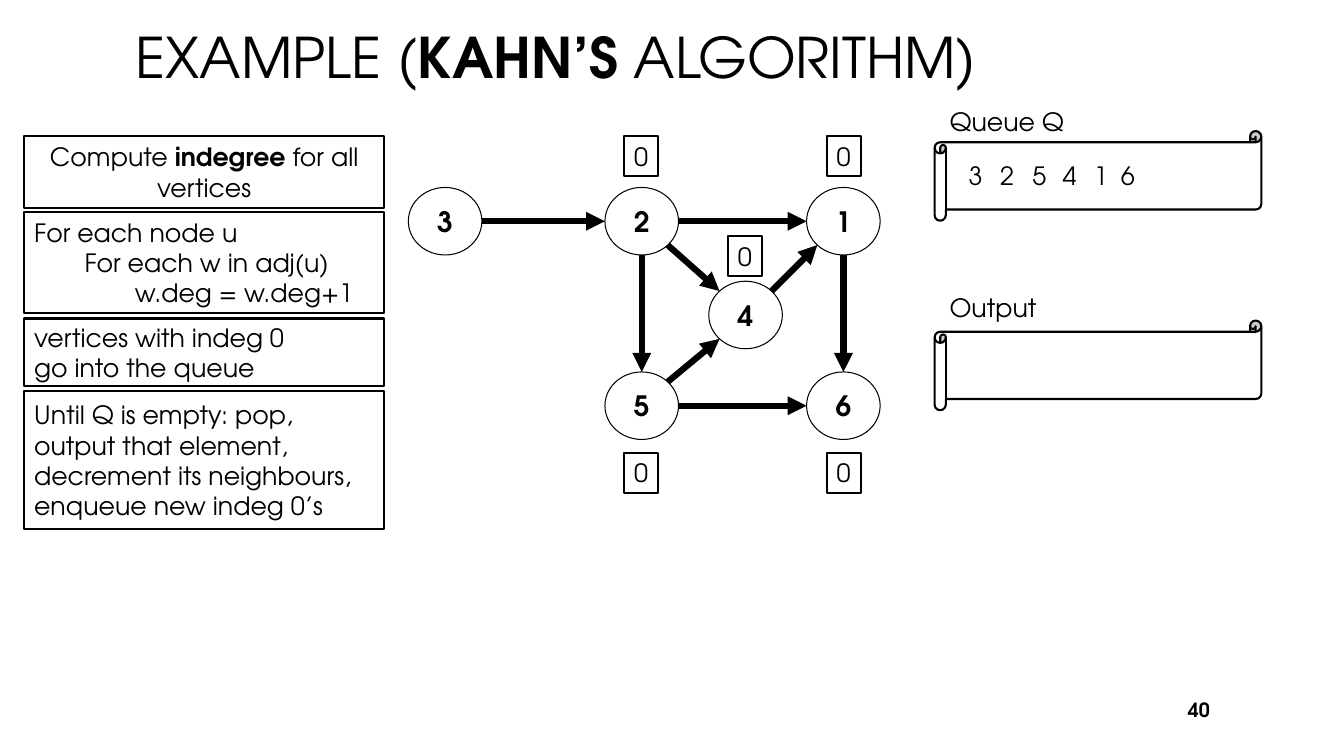
from dataclasses import dataclass
from math import hypot

from lxml.etree import SubElement
from pptx import Presentation
from pptx.dml.color import RGBColor
from pptx.enum.shapes import MSO_CONNECTOR as CONN, MSO_SHAPE as SHAPE
from pptx.enum.text import MSO_ANCHOR as ANCHOR, MSO_AUTO_SIZE as AUTO, PP_ALIGN as ALIGN
from pptx.oxml.ns import qn
from pptx.util import Inches, Pt


@dataclass(frozen=True)
class Theme:
    font: str = "TeX Gyre Adventor"
    ink: RGBColor = RGBColor(0, 0, 0)
    paper: RGBColor = RGBColor(255, 255, 255)
    title: int = 40
    node: int = 20
    body: int = 18
    footer: int = 14
    thin: float = 0.75
    frame: float = 1.5
    arrow: float = 4.5


THEME = Theme()
NODE_W, NODE_H = 0.73, 0.67
TAG_W, TAG_H = 0.34, 0.4
INDENT = 0.5

NODES = {
    "1": (8, 1.86), "6": (8, 3.69), "5": (6, 3.69),
    "2": (6, 1.86), "4": (7.03, 2.79), "3": (4.05, 1.86),
}
EDGES = ["32", "21", "24", "41", "54", "25", "16", "56"]
INDEGREES = [(6.19, 1.35), (6.19, 4.49), (7.22, 2.34), (8.2, 1.35), (8.2, 4.49)]
STEPS = [
    (1.35, 0.71, "Compute **indegree** for all vertices", ALIGN.CENTER),
    (2.1, 1.01, ["For each node u", "For each w in adj(u)", "w.deg = w.deg+1"], ALIGN.LEFT),
    (3.16, 0.67, "vertices with indeg 0\ngo into the queue", ALIGN.LEFT),
    (3.88, 1.37, "Until Q is empty: pop, output that element, "
                 "decrement its neighbours, enqueue new indeg 0’s", ALIGN.LEFT),
]
QUEUE = {"3": 9.51, "2": 9.82, "5": 10.14, "4": 10.44, "1": 10.75, "6": 11.02}
SCROLLS = [("Queue Q", 1.35, 1.01, 1.3), ("Output", 1.07, 2.85, 3.18)]


def add_run(p, text, size, bold):
    r = p.add_run()
    r.text = text
    r.font.name = THEME.font
    r.font.size = Pt(size)
    r.font.bold = bold
    r.font.color.rgb = THEME.ink


def write(sp, text, size=THEME.body, bold=False, align=ALIGN.LEFT,
          anchor=ANCHOR.MIDDLE, wrap=True):
    tf = sp.text_frame
    tf.word_wrap = wrap
    tf.auto_size = AUTO.NONE if wrap else AUTO.SHAPE_TO_FIT_TEXT
    tf.vertical_anchor = anchor
    for level, content in enumerate([text] if isinstance(text, str) else text):
        p = tf.add_paragraph() if level else tf.paragraphs[0]
        p.alignment = align
        if level:
            p._p.get_or_add_pPr().set("marL", str(Inches(INDENT * level)))
        for row, line in enumerate(content.split("\n")):
            if row:
                p.add_line_break()
            for i, part in enumerate(line.split("**")):
                add_run(p, part, size, bold or i % 2 == 1)


def add_label(s, x, y, w, h, text, **fmt):
    write(s.shapes.add_textbox(Inches(x), Inches(y), Inches(w), Inches(h)), text, **fmt)


def add_box(s, kind, x, y, w, h, text=None, line=THEME.frame, **fmt):
    sp = s.shapes.add_shape(kind, Inches(x), Inches(y), Inches(w), Inches(h))
    sp.shadow.inherit = False
    sp.fill.solid()
    sp.fill.fore_color.rgb = THEME.paper
    sp.line.color.rgb = THEME.ink
    sp.line.width = Pt(line)
    if text:
        write(sp, text, **fmt)


def rim_point(node, dx, dy):
    x, y = NODES[node]
    reach = hypot(dx, dy)
    return (Inches(x + NODE_W / 2 * (1 + dx / reach)),
            Inches(y + NODE_H / 2 * (1 + dy / reach)))


def sign(value):
    return (value > 0) - (value < 0)


def add_edge(s, source, target):
    dx, dy = (sign(b - a) for a, b in zip(NODES[source], NODES[target]))
    start, end = rim_point(source, dx, dy), rim_point(target, -dx, -dy)
    c = s.shapes.add_connector(CONN.STRAIGHT, *start, *end)
    c.line.color.rgb = THEME.ink
    c.line.width = Pt(THEME.arrow)
    SubElement(c.line._get_or_add_ln(), qn("a:tailEnd"), type="triangle")
    SubElement(c._element.spPr, qn("a:effectLst"))


def main():
    prs = Presentation()
    prs.slide_width, prs.slide_height = Inches(13.33), Inches(7.5)
    s = prs.slides.add_slide(prs.slide_layouts[6])

    add_label(s, 1.25, 0, 10.83, 1.12, "EXAMPLE (**KAHN’S **ALGORITHM)", size=THEME.title)

    for name, (x, y) in NODES.items():
        add_box(s, SHAPE.OVAL, x, y, NODE_W, NODE_H, name, line=THEME.thin,
                size=THEME.node, bold=True, align=ALIGN.CENTER)
    for source, target in EDGES:
        add_edge(s, source, target)
    for x, y in INDEGREES:
        add_box(s, SHAPE.RECTANGLE, x, y, TAG_W, TAG_H, "0", anchor=ANCHOR.TOP, wrap=False)

    for y, h, text, align in STEPS:
        add_box(s, SHAPE.RECTANGLE, 0.24, y, 3.57, h, text, align=align)

    for name, w, label_y, scroll_y in SCROLLS:
        add_box(s, SHAPE.HORIZONTAL_SCROLL, 9.27, scroll_y, 3.24, 0.89)
        add_label(s, 9.32, label_y, w, TAG_H, name, anchor=ANCHOR.TOP, wrap=False)
    for name, x in QUEUE.items():
        add_label(s, x, 1.54, TAG_W, TAG_H, name, anchor=ANCHOR.TOP, wrap=False)

    add_label(s, 11.5, 6.84, 0.6, 0.4, "40", size=THEME.footer, bold=True, align=ALIGN.RIGHT)
    prs.save("out.pptx")


if __name__ == "__main__":
    main()
